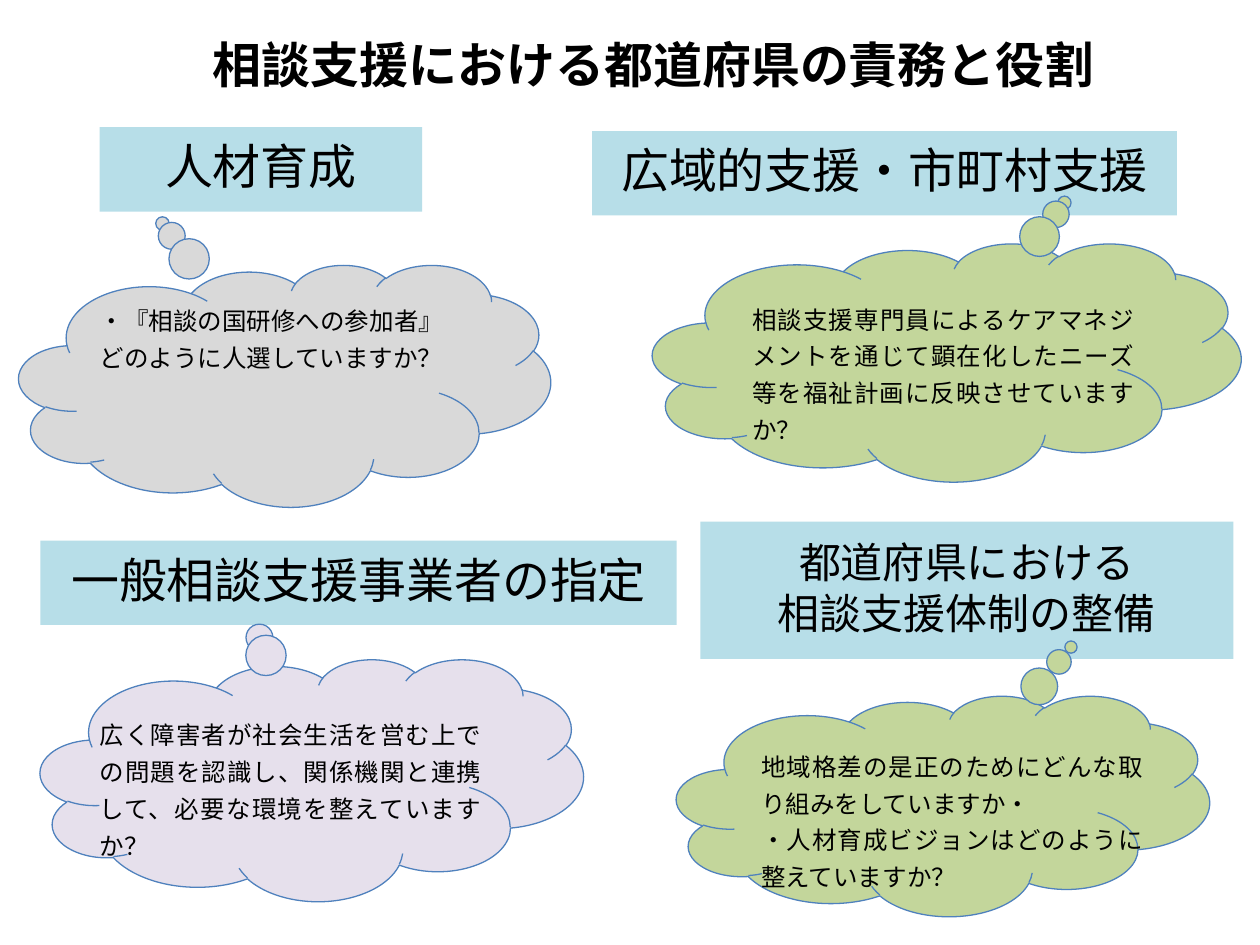
from dataclasses import dataclass

from lxml.etree import SubElement
from pptx import Presentation
from pptx.dml.color import RGBColor
from pptx.enum.shapes import MSO_SHAPE
from pptx.enum.text import MSO_ANCHOR, PP_ALIGN
from pptx.oxml.ns import qn
from pptx.shapes.shapetree import SlideShapes
from pptx.text.text import TextFrame
from pptx.util import Inches, Pt

FONT = "Noto Sans CJK JP"
BLACK = RGBColor(0x00, 0x00, 0x00)
HEADING_BLUE = RGBColor(0xB7, 0xDE, 0xE8)
OUTLINE_BLUE = RGBColor(0x4F, 0x81, 0xBD)
GREY = RGBColor(0xD9, 0xD9, 0xD9)
GREEN = RGBColor(0xC3, 0xD6, 0x9B)
LILAC = RGBColor(0xE6, 0xE0, 0xEC)

QUESTION_WIDTH, QUESTION_HEIGHT = 3.03, 1.07
Box = tuple[float, float, float, float]  # left, top, width, height in inches


@dataclass
class Topic:
    heading: str
    heading_box: Box
    heading_size: float
    cloud_box: Box
    cloud_tail: tuple[float, float]
    cloud_fill: RGBColor
    question: str
    question_at: tuple[float, float]


TOPICS = [
    Topic("人材育成", (0.79, 1.01, 2.56, 0.67), 27.4,
          (0.15, 2.1, 4.22, 1.92), (-0.23, -0.67), GREY,
          "・『相談の国研修への参加者』\nどのように人選していますか？", (0.79, 2.37)),
    Topic("広域的支援・市町村支援", (4.7, 1.04, 4.64, 0.67), 27.4,
          (5.18, 1.93, 4.67, 1.89), (0.2, -0.67), GREEN,
          "相談支援専門員によるケアマネジメントを通じて顕在化したニーズ"
          "等を福祉計画に反映させていますか？", (5.97, 2.36)),
    Topic("一般相談支援事業者の指定", (0.32, 4.29, 5.05, 0.67), 27.4,
          (0.32, 5.23, 4.31, 1.92), (-0.1, -0.61), LILAC,
          "広く障害者が社会生活を営む上での問題を認識し、関係機関と連携"
          "して、必要な環境を整えていますか？", (0.79, 5.66)),
    Topic("都道府県における\n相談支援体制の整備", (5.56, 4.14, 4.23, 1.09), 24,
          (5.37, 5.52, 4.23, 1.75), (0.24, -0.72), GREEN,
          "地域格差の是正のためにどんな取り組みをしていますか・\n"
          "・人材育成ビジョンはどのように整えていますか？", (6.04, 5.91)),
]


def write(frame: TextFrame, text: str, size: float, align: PP_ALIGN,
          anchor: MSO_ANCHOR, spacing: float = 1.0, after: float = 0,
          margin: float = 0, bold: bool = False) -> None:
    frame.word_wrap = True
    frame.vertical_anchor = anchor
    frame.margin_left = frame.margin_right = Inches(margin)
    frame.margin_top = frame.margin_bottom = Inches(margin)
    frame.text = text
    for paragraph in frame.paragraphs:
        paragraph.alignment = align
        paragraph.line_spacing = spacing
        paragraph.space_after = Pt(after)
        for run in paragraph.runs:
            run.font.size = Pt(size)
            run.font.bold = bold
            run.font.color.rgb = BLACK
            run.font.name = FONT
            # East Asian text takes its own typeface
            SubElement(run.font._element, qn("a:ea"), typeface=FONT)


def add_title(shapes: SlideShapes, text: str, box: Box) -> None:
    title = shapes.add_textbox(*map(Inches, box))
    write(title.text_frame, text, 28, PP_ALIGN.CENTER, MSO_ANCHOR.BOTTOM, bold=True)


def add_heading(shapes: SlideShapes, topic: Topic) -> None:
    heading = shapes.add_shape(MSO_SHAPE.RECTANGLE, *map(Inches, topic.heading_box))
    heading.shadow.inherit = False
    heading.fill.solid()
    heading.fill.fore_color.rgb = HEADING_BLUE
    heading.line.fill.background()
    write(heading.text_frame, topic.heading, topic.heading_size, PP_ALIGN.CENTER,
          MSO_ANCHOR.MIDDLE, spacing=0.9, after=3, margin=0.02)


def add_cloud(shapes: SlideShapes, topic: Topic) -> None:
    cloud = shapes.add_shape(MSO_SHAPE.CLOUD_CALLOUT, *map(Inches, topic.cloud_box))
    cloud.shadow.inherit = False
    cloud.adjustments[0], cloud.adjustments[1] = topic.cloud_tail
    cloud.fill.solid()
    cloud.fill.fore_color.rgb = topic.cloud_fill
    cloud.line.color.rgb = OUTLINE_BLUE
    cloud.line.width = Pt(0.75)


def add_question(shapes: SlideShapes, topic: Topic) -> None:
    box = (*topic.question_at, QUESTION_WIDTH, QUESTION_HEIGHT)
    question = shapes.add_textbox(*map(Inches, box))
    write(question.text_frame, topic.question, 14, PP_ALIGN.JUSTIFY,
          MSO_ANCHOR.TOP, spacing=1.25)


def main() -> None:
    presentation = Presentation()
    presentation.slide_width, presentation.slide_height = Inches(10), Inches(7.5)
    shapes = presentation.slides.add_slide(presentation.slide_layouts[6]).shapes

    add_title(shapes, "相談支援における都道府県の責務と役割", (1.5, 0.36, 7.37, 0.38))

    # Layers from back to front: headings, thought clouds, questions
    for add_layer in (add_heading, add_cloud, add_question):
        for topic in TOPICS:
            add_layer(shapes, topic)

    presentation.save("out.pptx")


if __name__ == "__main__":
    main()
